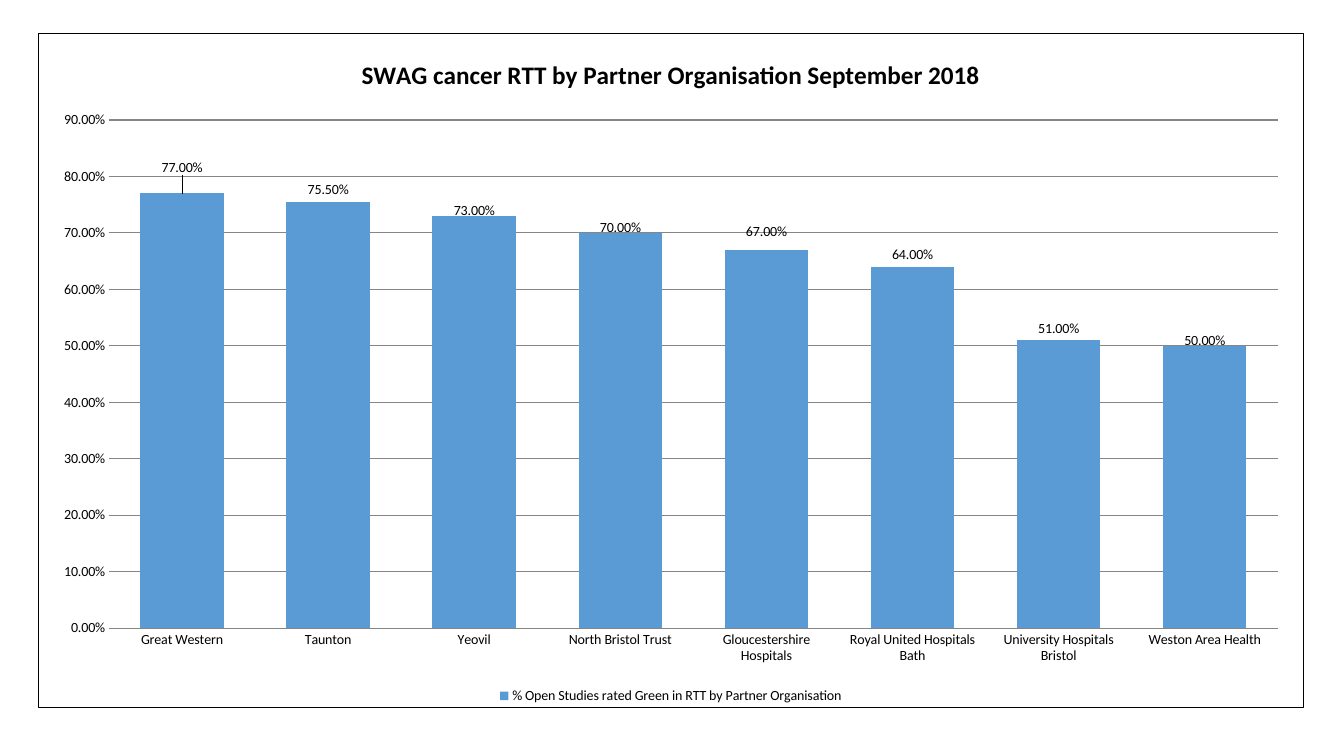
from dataclasses import dataclass

from lxml import etree
from pptx import Presentation
from pptx import util as u
from pptx.chart.data import CategoryChartData
from pptx.dml.color import RGBColor
from pptx.enum import chart as charts
from pptx.oxml import parse_xml
from pptx.oxml.ns import nsdecls, qn


@dataclass(frozen=True)
class Theme:
    font: str = "Calibri"
    text: str = "000000"
    bar: str = "5B9BD5"
    grid: str = "868686"
    border: str = "000000"
    background: str = "FFFFFF"
    title_size: float = 18
    body_size: float = 10
    line_width: float = 0.75


THEME = Theme()
WIDTH, HEIGHT = u.Inches(13.33), u.Inches(7.5)
PERCENT = "0.00%"
TITLE = "SWAG cancer RTT by Partner Organisation September 2018"
SERIES_NAME = "% Open Studies rated Green in RTT by Partner Organisation"
GREEN_SHARES = {
    "Great Western": 0.77,
    "Taunton": 0.755,
    "Yeovil": 0.73,
    "North Bristol Trust": 0.7,
    "Gloucestershire Hospitals": 0.67,
    "Royal United Hospitals Bath": 0.64,
    "University Hospitals Bristol": 0.51,
    "Weston Area Health": 0.5,
}
# Vertical label shifts by bar, as shares of the chart's height
LABEL_SHIFTS = {0: -0.02, 2: 0.01, 3: 0.01, 4: -0.01, 7: 0.01}


def format_font(font, size=THEME.body_size, bold=False, color=THEME.text):
    font.name = THEME.font
    font.size = u.Pt(size)
    font.bold = bold
    font.color.rgb = RGBColor.from_string(color)


def write_text(frame, content, **font_format):
    frame.text = content
    format_font(frame.paragraphs[0].runs[0].font, **font_format)


def format_line(line, color):
    line.color.rgb = RGBColor.from_string(color)
    line.width = u.Pt(THEME.line_width)


def manual_layout(**settings):
    """Build a chart layout element from its settings, in schema order."""
    layout = etree.Element(qn("c:layout"))
    manual = etree.SubElement(layout, qn("c:manualLayout"))
    for name, value in settings.items():
        etree.SubElement(manual, qn(f"c:{name}")).set("val", str(value))
    return layout


def add_column_chart(slide, left, top, width, height):
    data = CategoryChartData(number_format=PERCENT)
    data.categories = list(GREEN_SHARES)
    data.add_series(SERIES_NAME, list(GREEN_SHARES.values()))
    frame = slide.shapes.add_chart(
        charts.XL_CHART_TYPE.COLUMN_CLUSTERED,
        int(WIDTH * left), int(HEIGHT * top),
        int(WIDTH * width), int(HEIGHT * height), data)
    chart = frame.chart
    format_font(chart.font)
    return chart


def format_frame(chart):
    # Title and legend
    chart.has_title = True
    write_text(chart.chart_title.text_frame, TITLE,
               size=THEME.title_size, bold=True)
    chart.chart_title.include_in_layout = False
    chart.has_legend = True
    chart.legend.position = charts.XL_LEGEND_POSITION.BOTTOM
    chart.legend.include_in_layout = False
    format_font(chart.legend.font)

    # Background and border of the chart area
    border = parse_xml(
        f'<c:spPr {nsdecls("c", "a")}>'
        f'<a:solidFill><a:srgbClr val="{THEME.background}"/></a:solidFill>'
        f'<a:ln w="{u.Pt(THEME.line_width)}"><a:solidFill>'
        f'<a:srgbClr val="{THEME.border}"/></a:solidFill></a:ln></c:spPr>')
    chart_space = chart._chartSpace
    chart_space.find(qn("c:chart")).addnext(border)

    # Plot area
    plot_area = chart_space.find(".//" + qn("c:plotArea"))
    for layout in plot_area.findall(qn("c:layout")):
        plot_area.remove(layout)
    plot_area.insert(0, manual_layout(
        layoutTarget="inner", xMode="edge", yMode="edge",
        x=0.056, y=0.128, w=0.924, h=0.754))


def format_axes(chart):
    for axis in (chart.category_axis, chart.value_axis):
        axis.major_tick_mark = charts.XL_TICK_MARK.NONE
        axis.minor_tick_mark = charts.XL_TICK_MARK.NONE
        format_font(axis.tick_labels.font)
    format_line(chart.category_axis.format.line, THEME.grid)
    values = chart.value_axis
    values.minimum_scale, values.maximum_scale = 0, 0.9
    values.major_unit = 0.1
    values.has_major_gridlines = True
    format_line(values.major_gridlines.format.line, THEME.grid)
    values.format.line.fill.background()
    values.tick_labels.number_format = PERCENT
    values.tick_labels.number_format_is_linked = False


def format_columns(chart):
    plot = chart.plots[0]
    plot.gap_width, plot.overlap = 75, -25
    plot.vary_by_categories = False
    series = plot.series[0]
    series.format.fill.solid()
    series.format.fill.fore_color.rgb = RGBColor.from_string(THEME.bar)

    # Value labels, some moved up or down
    labels = series.data_labels
    labels.show_value = True
    labels.number_format = PERCENT
    labels.number_format_is_linked = False
    labels.position = charts.XL_LABEL_POSITION.OUTSIDE_END
    format_font(labels.font)
    for index, shift in LABEL_SHIFTS.items():
        label = series.points[index].data_label
        label.position = charts.XL_LABEL_POSITION.OUTSIDE_END
        format_font(label.font)
    for element in series._element.iter(qn("c:dLbl")):
        index = element.find(qn("c:idx"))
        shift = LABEL_SHIFTS[int(index.get("val"))]
        index.addnext(manual_layout(x=0, y=shift))


def main():
    presentation = Presentation()
    presentation.slide_width, presentation.slide_height = WIDTH, HEIGHT
    slide = presentation.slides.add_slide(presentation.slide_layouts[6])
    chart = add_column_chart(slide, left=0.028, top=0.044,
                             width=0.942, height=0.893)
    format_frame(chart)
    format_axes(chart)
    format_columns(chart)
    presentation.save("out.pptx")


if __name__ == "__main__":
    main()
